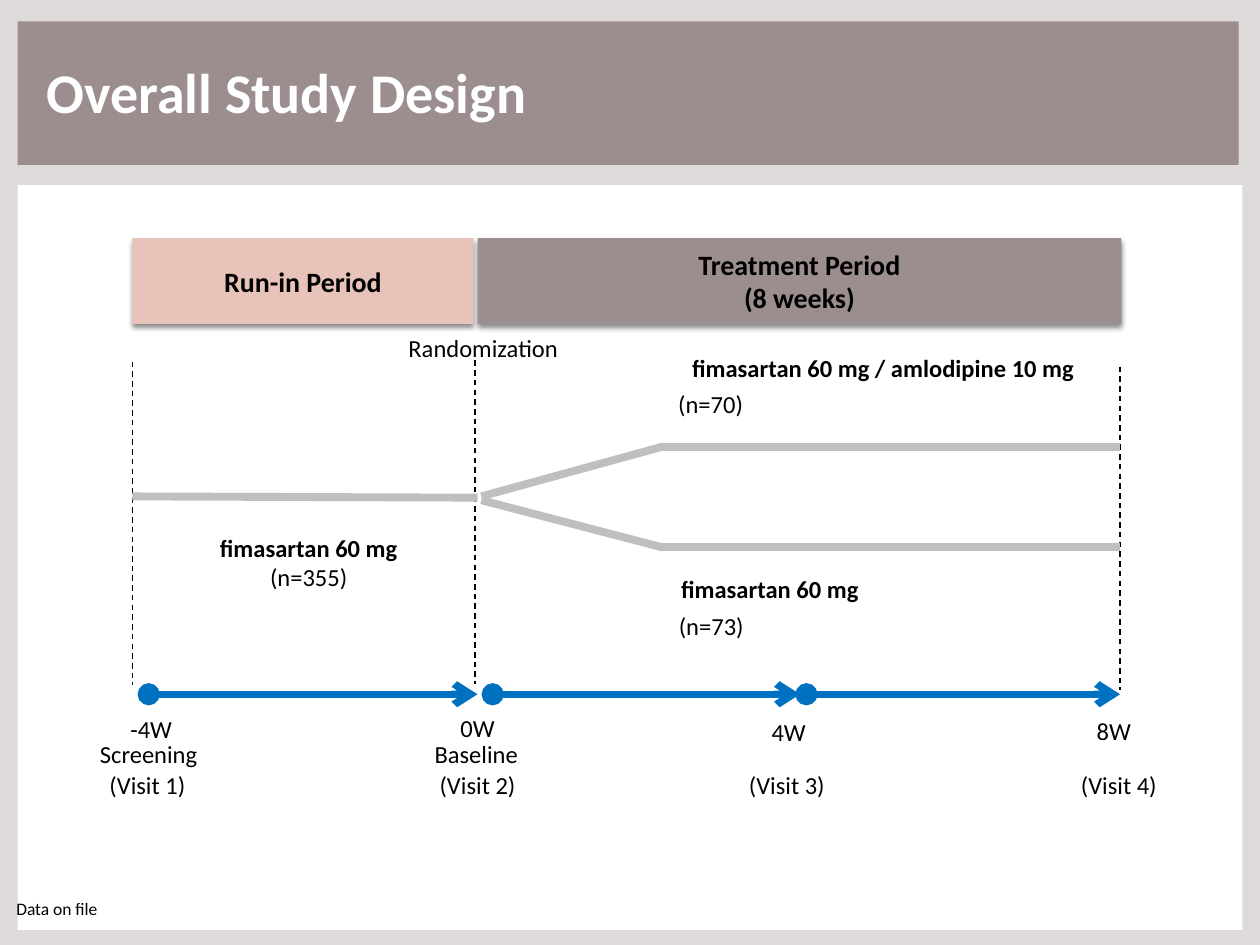
from dataclasses import dataclass

from lxml import etree
from pptx import Presentation
from pptx import util as u
from pptx.dml.color import RGBColor
from pptx.enum import dml, shapes, text
from pptx.oxml import ns


@dataclass(frozen=True)
class Theme:
    font: str = "Calibri"
    backdrop: str = "DEDADA"
    mauve: str = "9C8E8E"
    pink: str = "E8C3B9"
    white: str = "FFFFFF"
    ink: str = "000000"
    arm: str = "BFBFBF"
    arrow: str = "0070C0"
    title_size: float = 32
    period_size: float = 16
    body_size: float = 14
    note_size: float = 10
    dash_width: float = 0.79
    arrow_width: float = 4.25
    arm_width: float = 4.5


@dataclass(frozen=True)
class Box:
    left: float
    top: float
    width: float
    height: float = 0.34

    def emu(self) -> tuple:
        return tuple(map(u.Inches, (self.left, self.top, self.width, self.height)))


@dataclass(frozen=True)
class Line:
    start: tuple[float, float]
    end: tuple[float, float]


@dataclass(frozen=True)
class Run:
    text: str
    bold: bool = False


@dataclass(frozen=True)
class Label:
    box: Box
    runs: tuple[Run, ...]
    wrap: bool = True


@dataclass(frozen=True)
class Period:
    box: Box
    fill: str
    runs: tuple[Run, ...]


THEME = Theme()
CENTER, LEFT = text.PP_ALIGN.CENTER, text.PP_ALIGN.LEFT

# Shared positions
START, RANDOMIZED, FINISH = 1.05, 3.79, 8.89
TIMELINE_Y = 5.51
RUN_IN_Y, UPPER_Y, LOWER_Y = 3.94, 3.55, 4.34
FORK_START, FORK_END = 3.82, 5.24
ARM_START = 5.22
DASH_LENGTH = 2.57
VISIT_Y, STAGE_Y = 6.06, 5.82

PANELS = ((Box(0.14, 0.17, 9.69, 1.14), THEME.mauve),
          (Box(0.14, 1.47, 9.72, 5.91), THEME.white))

PERIODS = (
    Period(Box(RANDOMIZED, 1.89, 5.11, 0.68), THEME.mauve,
           (Run("Treatment Period", True), Run("(8 weeks)", True))),
    Period(Box(START, 1.89, 2.71, 0.68), THEME.pink, (Run("Run-in Period", True),)),
)

BOUNDARIES = tuple(Line((x, y), (x, y + DASH_LENGTH))
                   for x, y in ((START, 2.87), (3.77, 2.86), (FINISH, 2.91)))

INTERVALS = tuple(Line((x1, TIMELINE_Y), (x2, TIMELINE_Y))
                  for x1, x2 in ((1.18, RANDOMIZED), (3.91, 6.35), (6.4, FINISH)))

ARMS = (
    Line((START, RUN_IN_Y), (RANDOMIZED, RUN_IN_Y + 0.01)),
    Line((FORK_START, RUN_IN_Y), (FORK_END, UPPER_Y)),
    Line((ARM_START, UPPER_Y), (FINISH, UPPER_Y)),
    Line((FORK_START, RUN_IN_Y + 0.03), (FORK_END, LOWER_Y)),
    Line((ARM_START, LOWER_Y), (FINISH, LOWER_Y)),
)

LABELS = (
    # Randomization and treatment arms
    Label(Box(2.84, 2.59, 1.99), (Run("Randomization"),)),
    Label(Box(1.64, 4.18, 1.62, 0.57), (Run("fimasartan 60 mg", True), Run("(n=355)")), False),
    Label(Box(5.38, 2.75, 3.26), (Run("fimasartan 60 mg / amlodipine 10 mg", True),), False),
    Label(Box(5.28, 3.04, 0.72), (Run("(n=70)"),), False),
    Label(Box(5.3, 4.51, 1.62), (Run("fimasartan 60 mg", True),), False),
    Label(Box(4.65, 4.8, 1.99), (Run("(n=73)"),)),
    # Weeks
    Label(Box(0.49, 5.62, 1.42), (Run("-4W"),)),
    Label(Box(3.08, 5.61, 1.42), (Run("0W"),)),
    Label(Box(5.56, 5.64, 1.4), (Run("4W"),)),
    Label(Box(8.14, 5.63, 1.4), (Run("8W"),)),
    # Stages and visits
    Label(Box(0.48, STAGE_Y, 1.4), (Run("Screening"),)),
    Label(Box(3.08, STAGE_Y, 1.4), (Run("Baseline"),)),
    Label(Box(0.46, VISIT_Y, 1.42), (Run("(Visit 1)"),)),
    Label(Box(3.08, VISIT_Y, 1.42), (Run("(Visit 2)"),)),
    Label(Box(5.73, VISIT_Y, 1.03), (Run("(Visit 3)"),)),
    Label(Box(8.36, VISIT_Y, 1.04), (Run("(Visit 4)"),)),
)


def color(value: str) -> RGBColor:
    return RGBColor.from_string(value)


def write(frame, runs: tuple[Run, ...], size: float, align=CENTER, ink: str = THEME.ink) -> None:
    for index, part in enumerate(runs):
        paragraph = frame.paragraphs[0] if index == 0 else frame.add_paragraph()
        paragraph.alignment = align
        run = paragraph.add_run()
        run.text = part.text
        run.font.name = THEME.font
        run.font.size = u.Pt(size)
        run.font.bold = part.bold
        run.font.color.rgb = color(ink)


def fit(frame, wrap: bool, anchor=text.MSO_ANCHOR.TOP) -> None:
    frame.word_wrap = wrap
    frame.auto_size = text.MSO_AUTO_SIZE.SHAPE_TO_FIT_TEXT
    frame.vertical_anchor = anchor


def draw_block(slide, box: Box, fill: str):
    block = slide.shapes.add_shape(shapes.MSO_SHAPE.RECTANGLE, *box.emu())
    block.shadow.inherit = False
    block.fill.solid()
    block.fill.fore_color.rgb = color(fill)
    block.line.fill.background()
    return block


def draw_period(slide, period: Period) -> None:
    block = draw_block(slide, period.box, period.fill)
    block.text_frame.vertical_anchor = text.MSO_ANCHOR.MIDDLE
    write(block.text_frame, period.runs, THEME.period_size)
    effects = block.element.spPr.find(ns.qn("a:effectLst"))
    shadow = etree.SubElement(effects, ns.qn("a:outerShdw"), blurRad=str(u.Pt(3)),
                              dist=str(u.Pt(2)), dir="5400000", rotWithShape="0")
    tint = etree.SubElement(shadow, ns.qn("a:srgbClr"), val=THEME.ink)
    etree.SubElement(tint, ns.qn("a:alpha"), val="45000")


def draw_line(slide, line: Line, ink: str, width: float, dashed: bool = False,
              arrow: bool = False) -> None:
    ends = map(u.Inches, (*line.start, *line.end))
    connector = slide.shapes.add_connector(shapes.MSO_CONNECTOR.STRAIGHT, *ends)
    connector.line.color.rgb = color(ink)
    connector.line.width = u.Pt(width)
    if dashed:
        connector.line.dash_style = dml.MSO_LINE.DASH
    properties = connector.element.spPr
    if arrow:
        outline = properties.find(ns.qn("a:ln"))
        etree.SubElement(outline, ns.qn("a:headEnd"), type="oval")
        etree.SubElement(outline, ns.qn("a:tailEnd"), type="arrow")
    etree.SubElement(properties, ns.qn("a:effectLst"))


def draw_label(slide, label: Label) -> None:
    frame = slide.shapes.add_textbox(*label.box.emu()).text_frame
    fit(frame, label.wrap)
    write(frame, label.runs, THEME.body_size)


def draw_title(slide, box: Box, wording: str) -> None:
    title = slide.shapes.title
    title.left, title.top, title.width, title.height = box.emu()
    fit(title.text_frame, False)
    write(title.text_frame, (Run(wording, True),), THEME.title_size, LEFT, THEME.white)
    title.element.getparent().append(title.element)  # in front of the header band


def draw_footnote(slide, box: Box, wording: str) -> None:
    frame = slide.shapes.add_textbox(*box.emu()).text_frame
    fit(frame, False)
    frame.margin_left = frame.margin_right = frame.margin_top = frame.margin_bottom = 0
    write(frame, (Run(wording),), THEME.note_size, LEFT)


def main() -> None:
    deck = Presentation()
    deck.slide_width, deck.slide_height = u.Inches(10), u.Inches(7.5)
    slide = deck.slides.add_slide(deck.slide_layouts[5])
    slide.background.fill.solid()
    slide.background.fill.fore_color.rgb = color(THEME.backdrop)

    # Header band, content panel and title
    for box, fill in PANELS:
        draw_block(slide, box, fill)
    draw_title(slide, Box(0.27, 0.41, 4.04, 0.64), "Overall Study Design")

    # Study diagram
    for boundary in BOUNDARIES:
        draw_line(slide, boundary, THEME.ink, THEME.dash_width, dashed=True)
    for interval in INTERVALS:
        draw_line(slide, interval, THEME.arrow, THEME.arrow_width, arrow=True)
    for period in PERIODS:
        draw_period(slide, period)
    for arm in ARMS:
        draw_line(slide, arm, THEME.arm, THEME.arm_width)
    for label in LABELS:
        draw_label(slide, label)

    draw_footnote(slide, Box(0.13, 7.13, 0.67, 0.17), "Data on file")
    deck.save("out.pptx")


if __name__ == "__main__":
    main()
